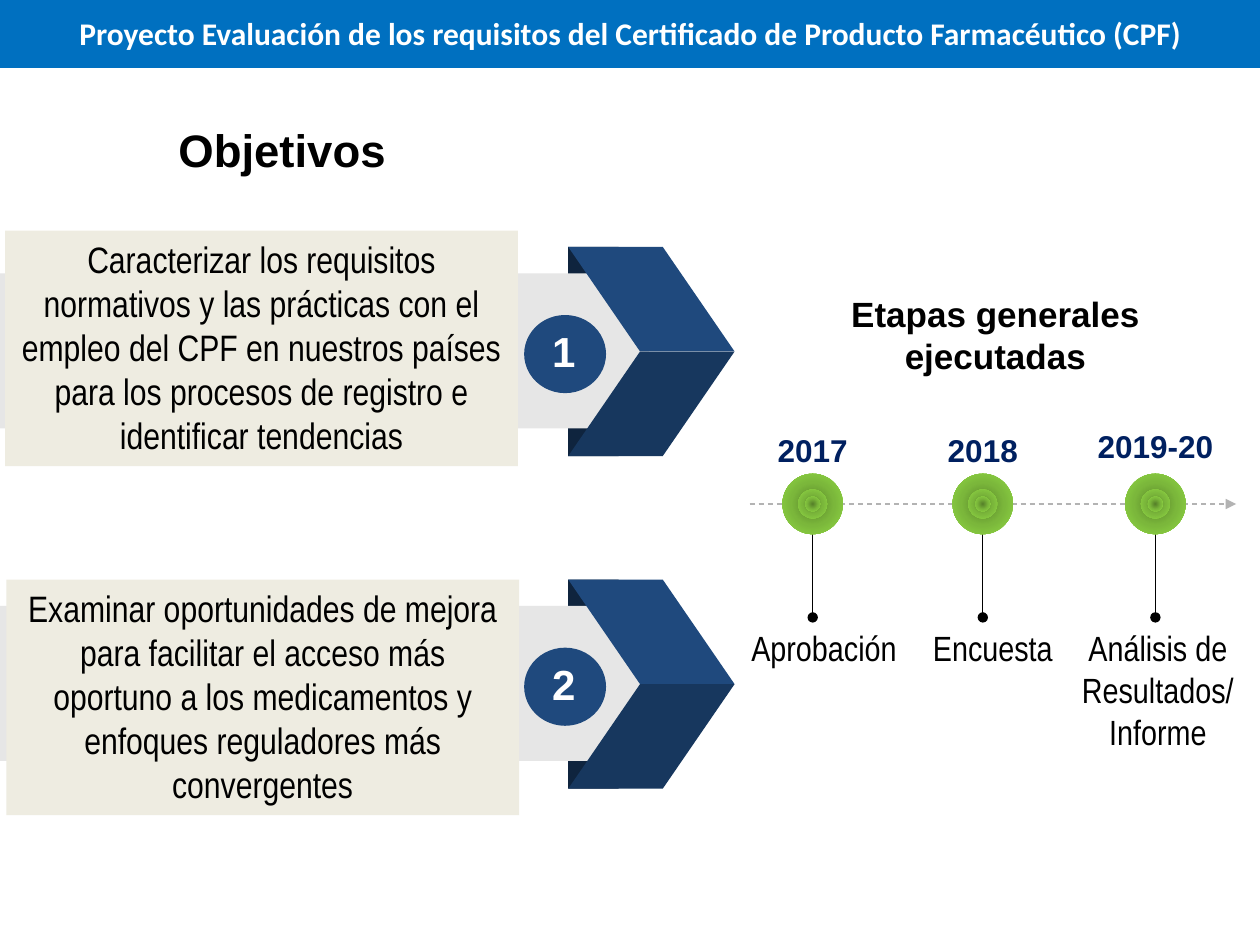
from lxml import etree
from pptx import Presentation
from pptx.dml.color import RGBColor
from pptx.enum.dml import MSO_LINE
from pptx.enum.shapes import MSO_CONNECTOR, MSO_SHAPE
from pptx.enum.text import MSO_ANCHOR, PP_ALIGN
from pptx.oxml import parse_xml
from pptx.oxml.ns import nsdecls, qn
from pptx.util import Inches, Pt

BLUE, DARK_BLUE, FOLD = "1F497D", "17375E", "0F243E"
GREENS = [(0, "57812A"), (50, "7BB73B"), (100, "92DA46")]


def color(hex_string):
    return RGBColor.from_string(hex_string)


def paint(sp, fill):
    sp.shadow.inherit = False
    sp.fill.solid()
    sp.fill.fore_color.rgb = color(fill)
    sp.line.fill.background()


def add_preset(shapes, kind, x, y, w, h, fill):
    sp = shapes.add_shape(kind, Inches(x), Inches(y), Inches(w), Inches(h))
    paint(sp, fill)
    return sp


def add_polygon(shapes, points, fill):
    corners = [(Inches(x), Inches(y)) for x, y in points]
    builder = shapes.build_freeform(*corners[0])
    builder.add_line_segments(corners[1:], close=True)
    paint(builder.convert_to_shape(), fill)


def write(sp, lines, size, font, fill="000000", bold=False,
          anchor=MSO_ANCHOR.TOP, wrap=True):
    tf = sp.text_frame
    tf.word_wrap = wrap
    tf.vertical_anchor = anchor
    for i, line in enumerate(lines):
        p = tf.paragraphs[0] if i == 0 else tf.add_paragraph()
        p.alignment = PP_ALIGN.CENTER
        r = p.add_run()
        r.text = line
        r.font.size = Pt(size)
        r.font.name = font
        r.font.bold = bold
        r.font.color.rgb = color(fill)


def add_text(shapes, x, y, w, h, lines, size, font, **style):
    sp = shapes.add_textbox(Inches(x), Inches(y), Inches(w), Inches(h))
    write(sp, lines, size, font, **style)


def add_line(shapes, x1, y1, x2, y2, fill, head=None, tail=None):
    line = shapes.add_connector(MSO_CONNECTOR.STRAIGHT, Inches(x1), Inches(y1),
                                Inches(x2), Inches(y2))
    line.line.color.rgb = color(fill)
    line.line.width = Pt(0.75)
    props = line._element.spPr
    ln = props.find(qn("a:ln"))
    for tag, end in (("a:headEnd", head), ("a:tailEnd", tail)):
        if end:
            etree.SubElement(ln, qn(tag)).set("type", end)
    etree.SubElement(props, qn("a:effectLst"))
    return line


def fill_radial(sp, stops):
    """Replace the solid fill with a circular gradient from the centre."""
    marks = "".join(f'<a:gs pos="{pos * 1000}"><a:srgbClr val="{c}"/></a:gs>'
                    for pos, c in stops)
    gradient = parse_xml(
        f'<a:gradFill {nsdecls("a")} rotWithShape="1"><a:gsLst>{marks}</a:gsLst>'
        '<a:path path="circle"><a:fillToRect l="50000" t="50000" r="50000" '
        'b="50000"/></a:path></a:gradFill>')
    props = sp._element.spPr
    props.replace(props.find(qn("a:solidFill")), gradient)


def add_header(shapes, x, y, w, h):
    add_preset(shapes, MSO_SHAPE.RECTANGLE, x, y, w, h, "0070C0")
    add_text(shapes, x + 0.42, y + 0.06, w - 0.83, 0.4,
             ["Proyecto Evaluación de los requisitos del Certificado de "
              "Producto Farmacéutico (CPF)"],
             18, "Calibri", fill="FFFFFF", bold=True)


def add_arrow_band(shapes, x, y, w, h):
    """Grey band running into a folded chevron, with a disc for the number."""
    left, middle, fold_h = x + w - 1.32, y + h / 2, 0.3
    for top in (y, y + h - fold_h):
        add_preset(shapes, MSO_SHAPE.RECTANGLE, left, top, 0.4, fold_h, FOLD)
    add_preset(shapes, MSO_SHAPE.RECTANGLE, x, y + 0.21, w - 0.68, 1.23, "E6E6E6")
    for edge, fill in ((y, BLUE), (y + h, DARK_BLUE)):
        add_polygon(shapes, [(left, edge), (left + 0.75, edge), (x + w, middle),
                             (left + 0.57, middle)], fill)
    add_preset(shapes, MSO_SHAPE.OVAL, left - 0.35, y + 0.54, 0.65, 0.62, BLUE)


def add_objective(shapes, x, y, w, h, number, text, text_x, text_y):
    add_arrow_band(shapes.add_group_shape().shapes, x, y, w, h)
    sp = add_preset(shapes, MSO_SHAPE.RECTANGLE, text_x, text_y, 4.07, 1.87, "EEECE1")
    write(sp, [text], 21, "Arial Narrow")
    add_text(shapes, x + w - 1.72, y + 0.43, 0.73, 0.79, [number], 24, "Arial",
             fill="FFFFFF", bold=True, anchor=MSO_ANCHOR.MIDDLE)


def add_milestone(shapes, x, y, year, year_top):
    """Stem, rings and year, centred on the point (x, y) of the axis."""
    add_line(shapes, x, y - 0.06, x, y + 0.9, "000000", "oval", "oval")
    for d in (0.48, 0.23, 0.12):
        ring = add_preset(shapes, MSO_SHAPE.OVAL, x - d / 2, y - d / 2, d, d, GREENS[0][1])
        fill_radial(ring, GREENS)
    add_text(shapes, x - 0.57, year_top, 1.14, 0.4, [year], 18, "Arial",
             fill="002060", bold=True, wrap=False)


def add_timeline(shapes, x, y, w):
    stages = [  # stem x, year, year top, label centre, label width, label
        (6.45, "2017", 3.37, 6.54, 1.37, ["Aprobación"]),
        (7.8, "2018", 3.37, 7.88, 1.16, ["Encuesta"]),
        (9.17, "2019-20", 3.34, 9.19, 1.6, ["Análisis de Resultados/", "Informe"]),
    ]
    group = shapes.add_group_shape().shapes
    axis = add_line(group, x, y, x + w, y, "B3B3B3", tail="triangle")
    axis.line.dash_style = MSO_LINE.DASH
    for stem, year, year_top, center, label_w, label in stages:
        add_milestone(group, stem, y, year, year_top)
        add_text(shapes, center - label_w / 2, y + 0.92, label_w, 0.44, label,
                 20, "Arial Narrow", wrap=len(label) > 1)


def main():
    prs = Presentation()
    prs.slide_width, prs.slide_height = Inches(10), Inches(7.5)
    shapes = prs.slides.add_slide(prs.slide_layouts[6]).shapes

    add_text(shapes, 0.58, 0.79, 3.32, 0.79, ["Objetivos"], 26, "Arial",
             bold=True, anchor=MSO_ANCHOR.MIDDLE)
    add_objective(shapes, 0, 1.96, 5.83, 1.66, "1",
                  "Caracterizar los requisitos normativos y las prácticas con el "
                  "empleo del CPF en nuestros países para los procesos de registro "
                  "e identificar tendencias", 0.04, 1.83)
    add_objective(shapes, 0, 4.6, 5.83, 1.66, "2",
                  "Examinar oportunidades de mejora para facilitar el acceso más "
                  "oportuno a los medicamentos y enfoques reguladores más "
                  "convergentes", 0.05, 4.6)
    add_text(shapes, 6.04, 2.26, 3.72, 0.79, ["Etapas generales ejecutadas"],
             20, "Arial", bold=True, anchor=MSO_ANCHOR.MIDDLE)
    add_timeline(shapes, 5.95, 4, 3.86)
    add_header(shapes, 0, 0, 10, 0.54)
    prs.save("out.pptx")


if __name__ == "__main__":
    main()
